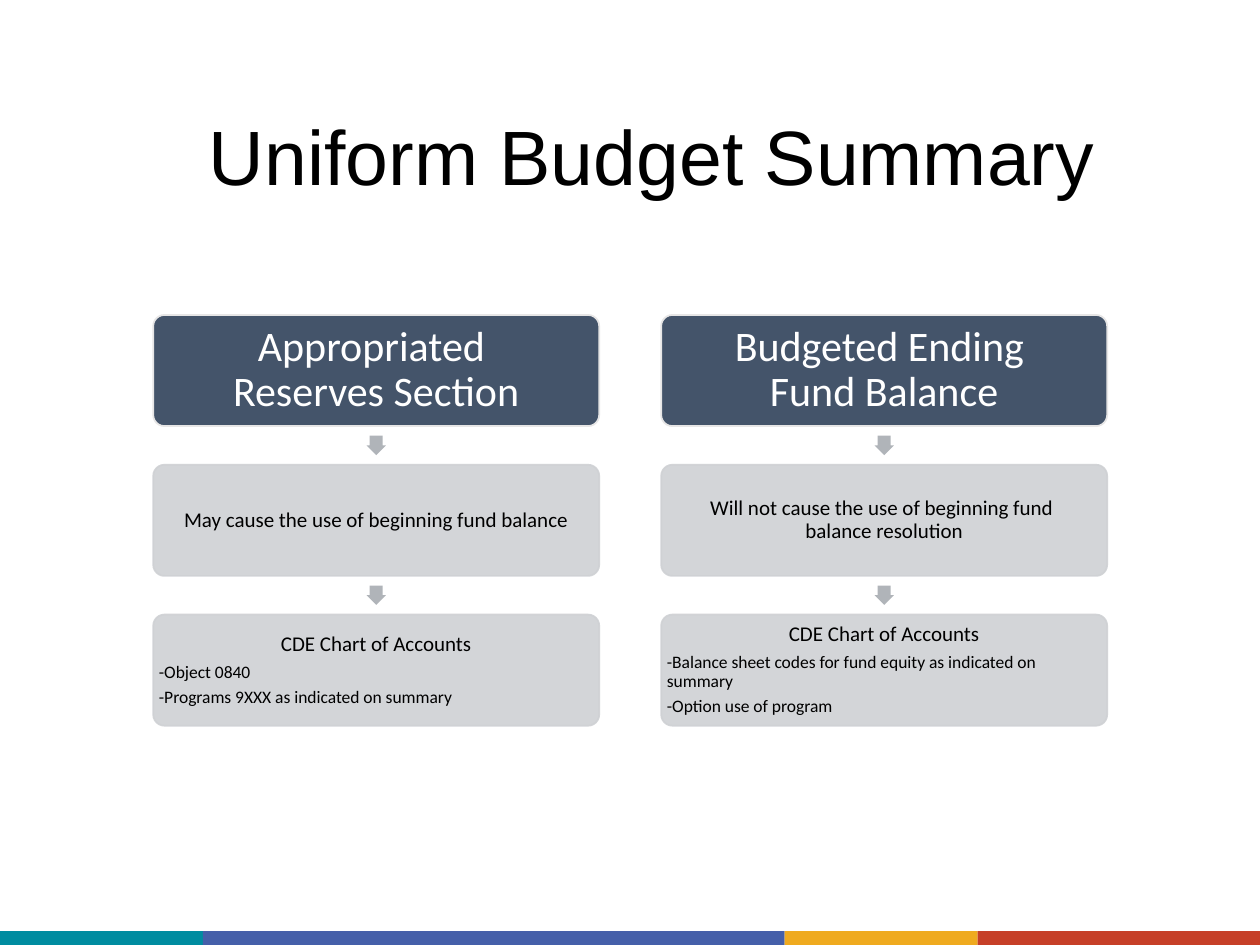
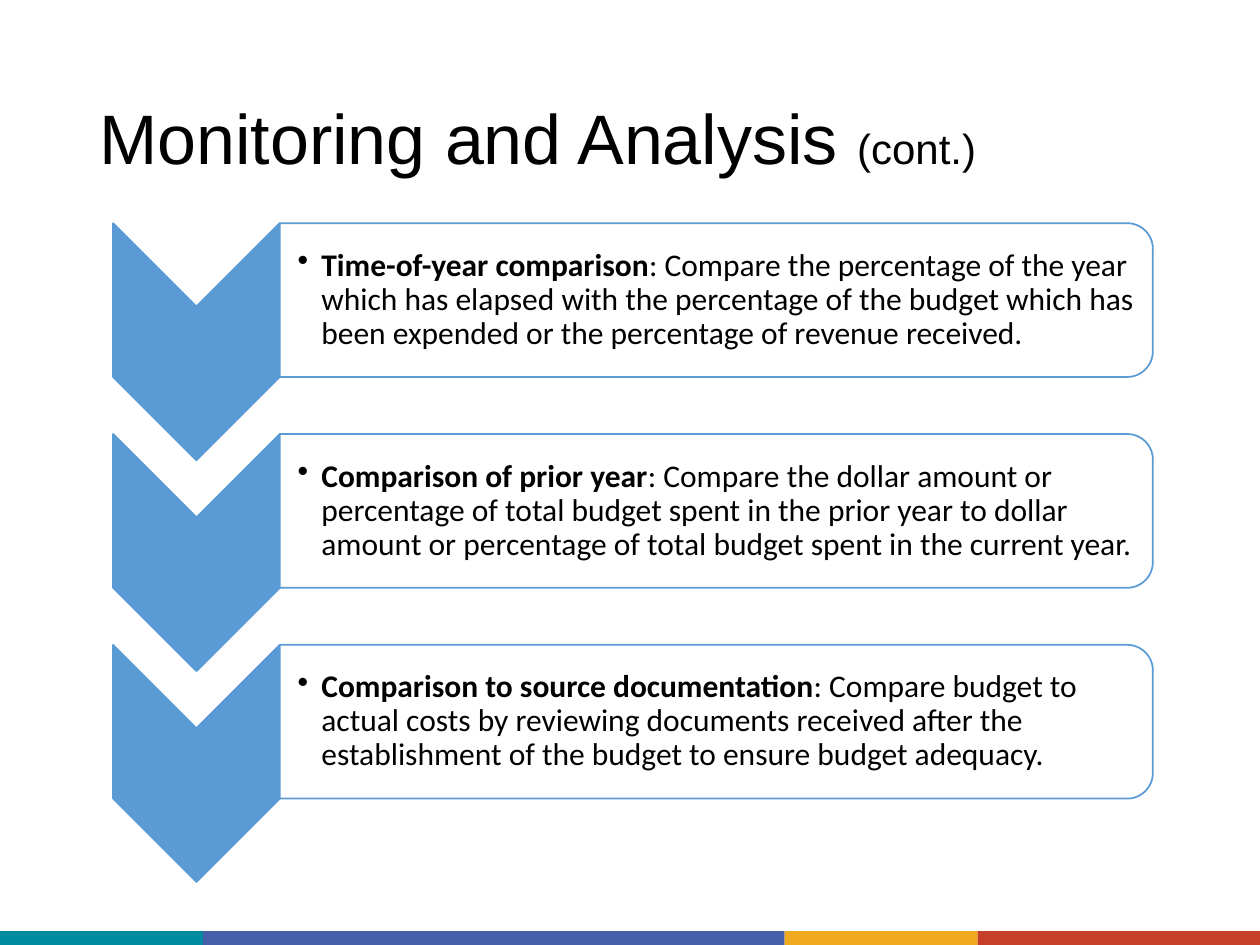
from lxml.etree import SubElement
from pptx import Presentation
from pptx.dml.color import RGBColor
from pptx.enum.shapes import MSO_SHAPE as Shape
from pptx.enum.text import MSO_ANCHOR as Anchor, PP_ALIGN as Align
from pptx.oxml.ns import qn
from pptx.util import Cm, Pt

# Shared colours and fonts
BLACK = RGBColor(0x00, 0x00, 0x00)
WHITE = RGBColor(0xFF, 0xFF, 0xFF)
TEAL = RGBColor(0x00, 0x8C, 0xA0)
INDIGO = RGBColor(0x45, 0x5F, 0xA9)
GOLD = RGBColor(0xEF, 0xAA, 0x1F)
RED = RGBColor(0xC6, 0x3F, 0x28)
SLATE = RGBColor(0x44, 0x54, 0x6A)
PALE_GREY = RGBColor(0xE7, 0xE6, 0xE6)
STEP_GREY = RGBColor(0xCF, 0xD1, 0xD4)
ARROW_GREY = RGBColor(0xB0, 0xB4, 0xB9)
BLUE = RGBColor(0x5B, 0x9B, 0xD5)
TITLE_FONT, BODY_FONT = "Arial", "Calibri"

# Footer bands, left to right: colour, width, height (cm)
BANDS = [(TEAL, 4.09, 0.28), (INDIGO, 11.73, 0.28),
         (GOLD, 3.89, 0.3), (RED, 5.69, 0.28)]
BAND_TOP = 18.77

# Each column: heading, effect on the fund balance, account codes
BUDGET_COLUMNS = [
    ("Appropriated \nReserves Section",
     "May cause the use of beginning fund balance",
     ["-Object 0840", "-Programs 9XXX as indicated on summary"]),
    ("Budgeted Ending \nFund Balance",
     "Will not cause the use of beginning fund \nbalance resolution",
     ["-Balance sheet codes for fund equity as indicated on summary",
      "-Option use of program"]),
]

COMPARISONS = [
    ("Time-of-year comparison",
     ": Compare the percentage of the year which has elapsed with the "
     "percentage of the budget which has been expended or the percentage "
     "of revenue received."),
    ("Comparison of prior year",
     ": Compare the dollar amount or percentage of total budget spent in "
     "the prior year to dollar amount or percentage of total budget spent "
     "in the current year."),
    ("Comparison to source documentation",
     ": Compare budget to actual costs by reviewing documents received "
     "after the establishment of the budget to ensure budget adequacy."),
]


def write(frame, text, size=12, font=BODY_FONT, color=BLACK, bold=False,
          align=Align.LEFT, after=0, bullet=False, paragraph=None):
    """Add a paragraph to the frame, or runs to a given paragraph."""
    if paragraph is None:
        paragraph = frame.paragraphs[0]
        if paragraph.runs:
            paragraph = frame.add_paragraph()
        paragraph.alignment = align
        paragraph.line_spacing = 0.9
        paragraph.space_after = Pt(after)
        if bullet:
            props = paragraph._p.get_or_add_pPr()
            props.set("marL", str(Cm(0.48)))
            props.set("indent", str(-Cm(0.48)))
            SubElement(props, qn("a:buChar")).set("char", "•")
    for number, line in enumerate(text.split("\n")):
        if number:
            paragraph.add_line_break()
        run = paragraph.add_run()
        run.text = line
        run.font.size, run.font.name, run.font.bold = Pt(size), font, bold
        run.font.color.rgb = color
    return paragraph


def set_frame(frame, left, top, right, bottom):
    """Wrap the text, centre it vertically and set the margins (cm)."""
    frame.word_wrap = True
    frame.vertical_anchor = Anchor.MIDDLE
    frame.margin_left, frame.margin_top = Cm(left), Cm(top)
    frame.margin_right, frame.margin_bottom = Cm(right), Cm(bottom)
    return frame


def add_text_frame(slide, left, top, width, height, margins):
    box = slide.shapes.add_textbox(Cm(left), Cm(top), Cm(width), Cm(height))
    return set_frame(box.text_frame, *margins)


def add_block(slide, kind, left, top, width, height, fill, line=None,
              opacity=None):
    block = slide.shapes.add_shape(kind, Cm(left), Cm(top),
                                   Cm(width), Cm(height))
    block.shadow.inherit = False
    block.fill.solid()
    block.fill.fore_color.rgb = fill
    if line is None:
        block.line.fill.background()
    else:
        block.line.color.rgb = line
        block.line.width = Pt(1)
    if opacity is not None:
        for color in block._element.spPr.iter(qn("a:srgbClr")):
            SubElement(color, qn("a:alpha")).set("val", str(opacity * 1000))
    return block


def add_turned_block(slide, kind, left, top, width, height, fill, line):
    """Place a shape turned by 90° so that it covers the given area."""
    shift = (width - height) / 2
    block = add_block(slide, kind, left + shift, top - shift,
                      height, width, fill, line)
    block.rotation = 90


def add_bands(slide):
    left = 0
    for color, width, height in BANDS:
        add_block(slide, Shape.RECTANGLE, left, BAND_TOP, width, height, color)
        left += width


def add_title(slide, text, left, top, width, size, suffix=""):
    frame = add_text_frame(slide, left, top, width, 3.68,
                           (0.25, 0.13, 0.25, 0.13))
    title = write(frame, text, size=size, font=TITLE_FONT)
    if suffix:
        write(frame, suffix, size=24, font=TITLE_FONT, paragraph=title)


def add_step(slide, left, top, width, height, fill, line, margin, opacity=None):
    step = add_block(slide, Shape.ROUNDED_RECTANGLE, left, top, width, height,
                     fill, line, opacity)
    step.adjustments[0] = 0.1
    return set_frame(step.text_frame, *[margin] * 4)


def add_budget_column(slide, left, heading, effect, codes):
    top, width, height, pitch = 6.35, 8.99, 2.24, 3.02
    arrow_size = 0.39
    tops = [top + row * pitch for row in range(3)]

    frame = add_step(slide, left, tops[0], width, height,
                     SLATE, PALE_GREY, 0.08)
    write(frame, heading, size=24, color=WHITE, align=Align.CENTER, after=8.4)

    effect_frame, codes_frame = [
        add_step(slide, left, step_top, width, height,
                 STEP_GREY, STEP_GREY, 0.05, opacity=90)
        for step_top in tops[1:]]
    write(effect_frame, effect, align=Align.CENTER, after=4.2)
    write(codes_frame, "CDE Chart of Accounts", align=Align.CENTER, after=4.2)
    for code in codes:
        write(codes_frame, code, size=10, after=3.5)

    # Arrows centred in the gaps between steps
    for step_top in tops[:2]:
        arrow = add_block(slide, Shape.DOWN_ARROW,
                          left + (width - arrow_size) / 2,
                          step_top + (height + pitch - arrow_size) / 2,
                          arrow_size, arrow_size, ARROW_GREY)
        arrow.adjustments[0] = 0.667


def add_comparison(slide, top, name, explanation):
    add_turned_block(slide, Shape.CHEVRON, 2.28, top, 3.36, 4.78, BLUE, BLUE)
    add_turned_block(slide, Shape.ROUND_2_SAME_RECTANGLE, 5.64, top,
                     17.6, 3.1, WHITE, BLUE)
    frame = add_text_frame(slide, 5.64, top + 0.15, 17.45, 2.8,
                           (0.36, 0.03, 0.03, 0.03))
    point = write(frame, name, size=18, bold=True, bullet=True, after=2.7)
    write(frame, explanation, size=18, paragraph=point)


def add_slide(deck):
    slide = deck.slides.add_slide(deck.slide_layouts[6])
    add_bands(slide)
    return slide


def main():
    deck = Presentation()
    deck.slide_width, deck.slide_height = Cm(25.4), Cm(19.05)

    # Uniform budget summary
    summary = add_slide(deck)
    for number, column in enumerate(BUDGET_COLUMNS):
        add_budget_column(summary, 3.09 + number * 10.24, *column)
    add_title(summary, "Uniform Budget Summary", 3.96, 1.4, 19.69, 44)

    # Monitoring and analysis
    monitoring = add_slide(deck)
    add_title(monitoring, "Monitoring and Analysis ", 1.75, 1.02, 21.9, 40,
              suffix="(cont.)")
    for number, comparison in enumerate(COMPARISONS):
        add_comparison(monitoring, 4.5 + number * 4.25, *comparison)

    deck.save("out.pptx")


if __name__ == "__main__":
    main()
